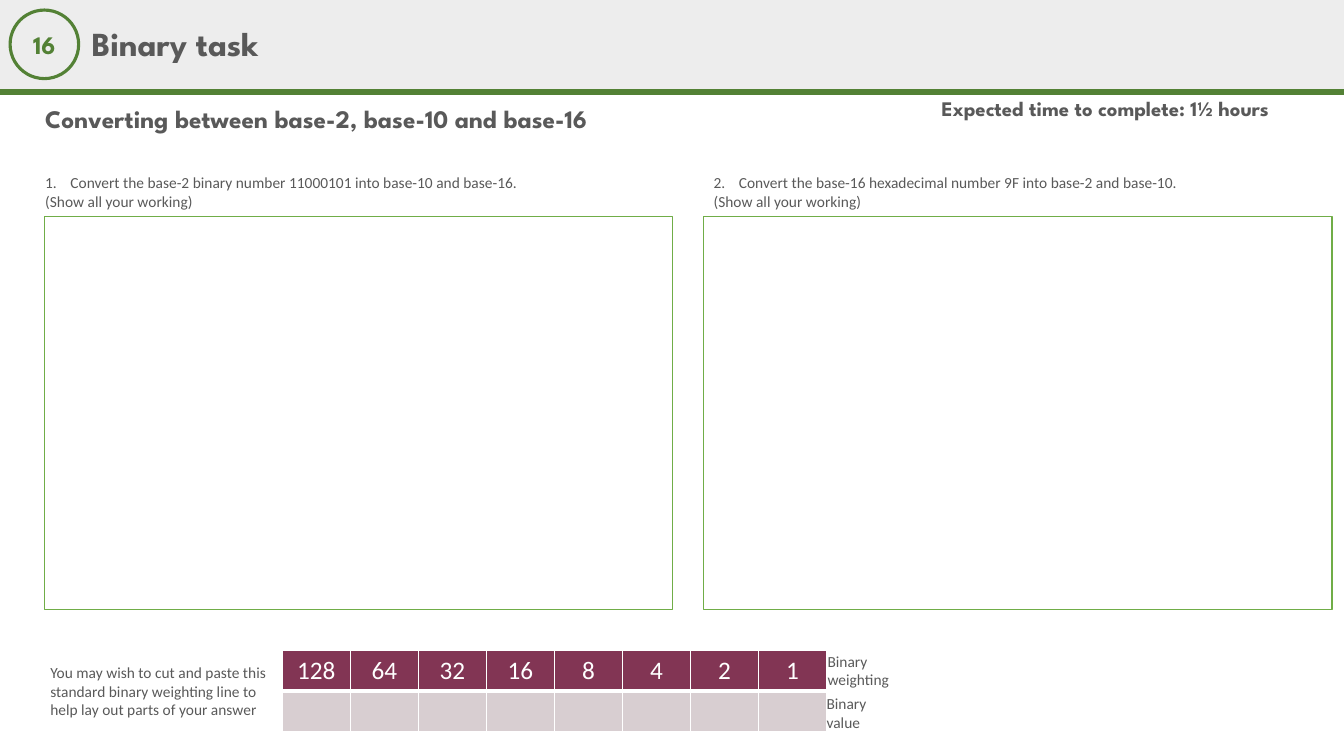
from lxml import etree
from pptx import Presentation
from pptx.dml.color import RGBColor
from pptx.enum.shapes import MSO_CONNECTOR, MSO_SHAPE
from pptx.enum.text import MSO_ANCHOR, MSO_AUTO_SIZE, PP_ALIGN
from pptx.oxml.ns import qn
from pptx.util import Inches, Pt

RECTANGLE, OVAL = MSO_SHAPE.RECTANGLE, MSO_SHAPE.OVAL
STRAIGHT = MSO_CONNECTOR.STRAIGHT
TOP, MIDDLE = MSO_ANCHOR.TOP, MSO_ANCHOR.MIDDLE
LEFT, CENTER = PP_ALIGN.LEFT, PP_ALIGN.CENTER
NO_AUTOFIT = MSO_AUTO_SIZE.NONE

GREY, GREEN, BOX_GREEN, WHITE = "595959", "538135", "70AD47", "FFFFFF"
BAND_GREY, WEIGHT_FILL, VALUE_FILL = "EDEDED", "823554", "D8CED1"

BODY = {"name": "Calibri", "size": Pt(11), "bold": False}
HEADING = {"name": "League Spartan", "size": Pt(18), "bold": True}
TITLE = {**HEADING, "size": Pt(24)}
TIMING = {**HEADING, "size": Pt(14.8)}
WEIGHT = {**BODY, "size": Pt(18)}

WORKING = "(Show all your working)"
QUESTIONS = [
    # text left, text width, box left, question
    (0.35, 7.13, 0.44,
     "Convert the base-2 binary number 11000101 into base-10 and base-16."),
    (6.98, 6.2, 6.98,
     "Convert the base-16 hexadecimal number 9F into base-2 and base-10."),
]
HINT = ("You may wish to cut and paste this standard binary weighting line "
        "to help lay out parts of your answer")


def rgb(value):
    return RGBColor.from_string(value)


def write(paragraph, text, style, color=GREY, align=LEFT, spacing=None):
    paragraph.text = text
    paragraph.alignment = align
    if spacing:
        paragraph.line_spacing = spacing
    for name, value in style.items():
        setattr(paragraph.font, name, value)
    paragraph.font.color.rgb = rgb(color)


def set_frame(frame, anchor=TOP):
    frame.word_wrap = True
    frame.auto_size = NO_AUTOFIT
    frame.vertical_anchor = anchor


def add_text(slide, box, lines, style, anchor=TOP, spacing=None):
    frame = slide.shapes.add_textbox(*map(Inches, box)).text_frame
    set_frame(frame, anchor)
    for index, line in enumerate(lines):
        paragraph = frame.add_paragraph() if index else frame.paragraphs[0]
        write(paragraph, line, style, spacing=spacing)
    return frame


def number_paragraph(paragraph, start):
    properties = paragraph._p.get_or_add_pPr()
    properties.set("marL", str(Inches(0.25)))
    properties.set("indent", str(Inches(-0.25)))
    numbering = etree.Element(qn("a:buAutoNum"), type="arabicPeriod",
                              startAt=str(start))
    default_font = properties.find(qn("a:defRPr"))
    if default_font is None:
        properties.append(numbering)
    else:
        default_font.addprevious(numbering)


def add_outline(slide, kind, box, fill=None, line=None, width=1):
    shape = slide.shapes.add_shape(kind, *map(Inches, box))
    shape.shadow.inherit = False
    if fill:
        shape.fill.solid()
        shape.fill.fore_color.rgb = rgb(fill)
    else:
        shape.fill.background()
    if line:
        shape.line.color.rgb = rgb(line)
        shape.line.width = Pt(width)
    else:
        shape.line.fill.background()
    return shape


def add_header(slide):
    add_outline(slide, RECTANGLE, (0, 0, 13.33, 0.91), fill=BAND_GREY)
    rule = slide.shapes.add_connector(
        STRAIGHT, 0, Inches(0.91), Inches(13.33), Inches(0.91))
    rule.line.color.rgb = rgb(GREEN)
    rule.line.width = Pt(4.5)
    etree.SubElement(rule._element.spPr, qn("a:effectLst"))

    badge = add_outline(slide, OVAL, (0.1, 0.1, 0.68, 0.68),
                        line=GREEN, width=2.25)
    frame = badge.text_frame
    set_frame(frame, MIDDLE)
    frame.margin_left = frame.margin_right = 0
    write(frame.paragraphs[0], "16", HEADING, GREEN, CENTER)

    title = slide.shapes.title
    title.left, title.top, title.width, title.height = map(
        Inches, (0.81, 0.09, 10.31, 0.73))
    set_frame(title.text_frame, MIDDLE)
    write(title.text_frame.paragraphs[0], "Binary task", TITLE, spacing=0.9)
    # Bring the title in front of the header band
    slide.shapes._spTree.append(title._element)


def add_question(slide, number, text_left, text_width, box_left, question):
    frame = add_text(slide, (text_left, 1.67, text_width, 0.47),
                     [question, WORKING], BODY)
    number_paragraph(frame.paragraphs[0], number)
    add_outline(slide, RECTANGLE, (box_left, 2.15, 6.23, 3.9), line=BOX_GREEN)


def set_borders(cell, bottom):
    properties = cell._tc.get_or_add_tcPr()
    widths = {"a:lnL": 1, "a:lnR": 1, "a:lnT": 1, "a:lnB": bottom}
    for index, (tag, width) in enumerate(widths.items()):
        border = etree.Element(qn(tag), w=str(Pt(width)))
        fill = etree.SubElement(border, qn("a:solidFill"))
        etree.SubElement(fill, qn("a:srgbClr"), val=WHITE)
        properties.insert(index, border)


def add_weighting_table(slide):
    weights = [2 ** power for power in range(7, -1, -1)]
    table = slide.shapes.add_table(
        2, len(weights), Inches(2.8), Inches(6.45), Inches(5.4), Inches(0.81)).table
    for column, weight in enumerate(weights):
        rows = [(str(weight), WEIGHT_FILL, 3), ("", VALUE_FILL, 1)]
        for row, (text, fill, bottom) in enumerate(rows):
            cell = table.cell(row, column)
            cell.fill.solid()
            cell.fill.fore_color.rgb = rgb(fill)
            set_borders(cell, bottom)
            write(cell.text_frame.paragraphs[0], text, WEIGHT, WHITE, CENTER)


def main():
    deck = Presentation()
    deck.slide_width, deck.slide_height = Inches(13.33), Inches(7.5)
    slide = deck.slides.add_slide(deck.slide_layouts[5])

    add_header(slide)
    add_text(slide, (9.24, 0.93, 4.09, 0.4),
             ["Expected time to complete: 1½ hours"], TIMING, spacing=0.9)
    add_text(slide, (0.35, 0.99, 8.43, 0.4),
             ["Converting between base-2, base-10 and base-16"],
             HEADING, MIDDLE, 0.9)
    for number, question in enumerate(QUESTIONS, 1):
        add_question(slide, number, *question)

    add_weighting_table(slide)
    add_text(slide, (8.11, 6.42, 0.93, 0.47), ["Binary weighting"], BODY)
    add_text(slide, (8.1, 6.84, 0.93, 0.47), ["Binary value"], BODY)
    add_text(slide, (0.4, 6.53, 2.38, 0.66), [HINT], BODY)
    deck.save("out.pptx")


if __name__ == "__main__":
    main()
